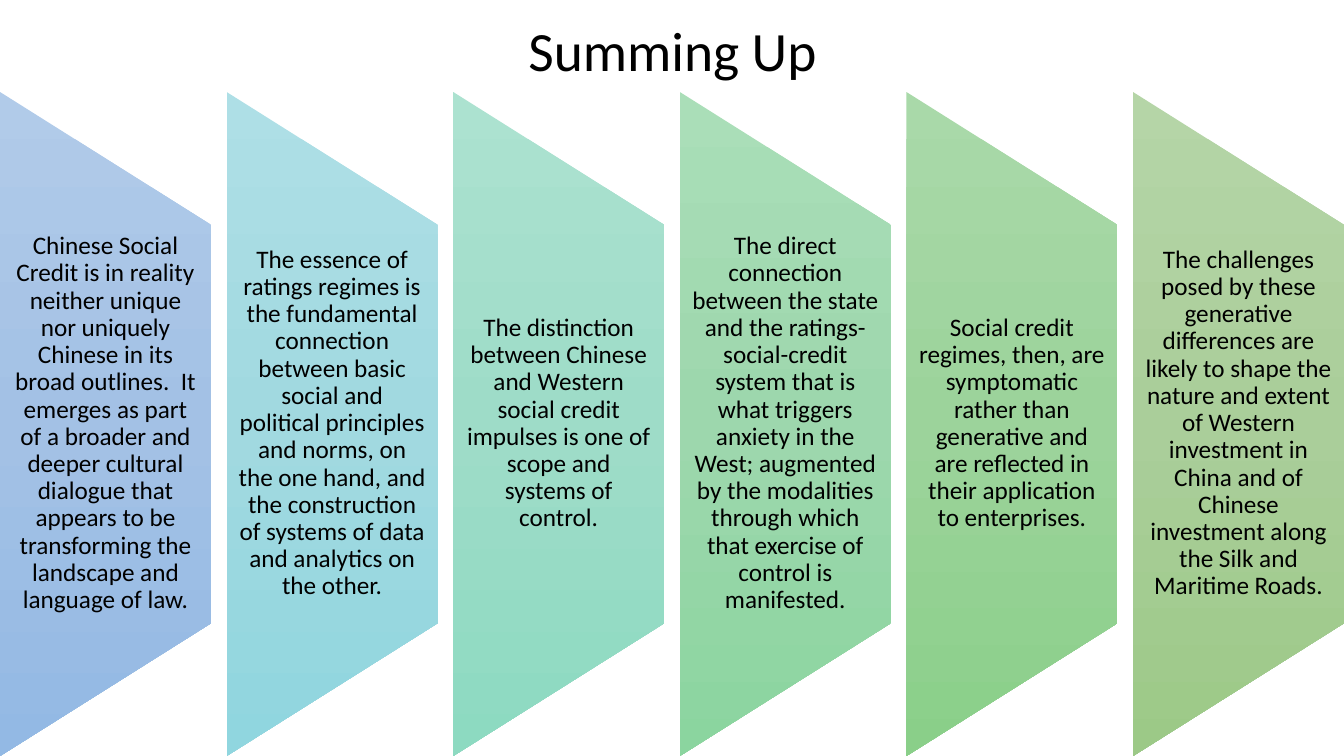
from pptx import Presentation
from pptx.dml.color import RGBColor
from pptx.enum.shapes import MSO_SHAPE
from pptx.enum.text import MSO_ANCHOR, MSO_AUTO_SIZE, PP_ALIGN
from pptx.oxml import parse_xml
from pptx.oxml.ns import nsdecls
from pptx.util import Emu, Pt

TRAPEZOID = MSO_SHAPE.FLOWCHART_MANUAL_OPERATION
MIDDLE, CENTER, NO_AUTOFIT = MSO_ANCHOR.MIDDLE, PP_ALIGN.CENTER, MSO_AUTO_SIZE.NONE
BLACK = RGBColor(0x00, 0x00, 0x00)

# Content: panel text with its top, middle and bottom gradient colours
TITLE = "Summing Up"
PANELS = [
    ("Chinese Social Credit is in reality neither unique nor uniquely Chinese in its "
     "broad outlines.  It emerges as part of a broader and deeper cultural dialogue that "
     "appears to be transforming the landscape and language of law.",
     (RGBColor(0xB1, 0xCB, 0xE9), RGBColor(0xA3, 0xC1, 0xE5), RGBColor(0x93, 0xB9, 0xE4))),
    ("The essence of ratings regimes is the fundamental connection between basic social "
     "and political principles and norms, on the one hand, and the construction of "
     "systems of data and analytics on the other.",
     (RGBColor(0xAE, 0xDF, 0xE6), RGBColor(0xA1, 0xD9, 0xE0), RGBColor(0x90, 0xD6, 0xDF))),
    ("The distinction between Chinese and Western social credit impulses is one of scope "
     "and systems of control.",
     (RGBColor(0xAC, 0xE2, 0xD0), RGBColor(0x9E, 0xDC, 0xC8), RGBColor(0x8D, 0xDA, 0xC1))),
    ("The direct connection between the state and the ratings-social-credit system that "
     "is what triggers anxiety in the West; augmented by the modalities through which "
     "that exercise of control is manifested.",
     (RGBColor(0xAA, 0xDE, 0xB8), RGBColor(0x9D, 0xD7, 0xAD), RGBColor(0x8B, 0xD5, 0x9F))),
    ("Social credit regimes, then, are symptomatic rather than generative and are "
     "reflected in their application to enterprises.",
     (RGBColor(0xA9, 0xD9, 0xA9), RGBColor(0x9C, 0xD3, 0x9B), RGBColor(0x8A, 0xCF, 0x89))),
    ("The challenges posed by these generative differences are likely to shape the nature "
     "and extent of Western investment in China and of Chinese investment along the Silk "
     "and Maritime Roads.",
     (RGBColor(0xB5, 0xD5, 0xA7), RGBColor(0xAA, 0xCE, 0x9A), RGBColor(0x9C, 0xC9, 0x87))),
]

# Layout in px
SLIDE_WIDTH, SLIDE_HEIGHT = 1344, 756
TITLE_BOX = (494, 16, 357, 75)
PANEL_TOP, PANEL_WIDTH, PANEL_HEIGHT = 92, 211, 664
TEXT_TOP, TEXT_HEIGHT, TEXT_INSET = 224, 399, 12
PANEL_PITCH = (SLIDE_WIDTH - PANEL_WIDTH) / (len(PANELS) - 1)

FRAME_FORMAT = {"word_wrap": True, "auto_size": NO_AUTOFIT, "vertical_anchor": MIDDLE}
PANEL_MARGINS = {"margin_left": TEXT_INSET, "margin_right": TEXT_INSET,
                 "margin_top": 0, "margin_bottom": 0}


def px(length):
    return Emu(round(length * 914400 / 100.8))


def set_attributes(target, values):
    for name, value in values.items():
        setattr(target, name, value)


def write_text(shape, text, size):
    frame = shape.text_frame
    frame.text = text
    set_attributes(frame, FRAME_FORMAT)
    paragraph = frame.paragraphs[0]
    set_attributes(paragraph, {"alignment": CENTER, "line_spacing": 0.9,
                               "space_before": Pt(0)})
    set_attributes(paragraph.font, {"name": "Calibri", "size": Pt(size)})
    paragraph.font.color.rgb = BLACK


def fill_downward(shape, colors):
    """Gradient that keeps running top to bottom when the shape is turned."""
    stops = "".join(
        f'<a:gs pos="{position}"><a:srgbClr val="{color}"/></a:gs>'
        for position, color in zip((0, 50000, 100000), colors))
    gradient = parse_xml(
        f'<a:gradFill {nsdecls("a")} rotWithShape="0"><a:gsLst>{stops}</a:gsLst>'
        '<a:lin ang="5400000" scaled="0"/></a:gradFill>')
    shape.fill.background()
    properties = shape._element.spPr
    properties.replace(properties.find("{*}noFill"), gradient)


def add_panel(slide, left, text, colors):
    # The trapezoid is drawn lying down and turned about its centre
    offset = (PANEL_HEIGHT - PANEL_WIDTH) / 2
    panel = slide.shapes.add_shape(TRAPEZOID, px(left - offset), px(PANEL_TOP + offset),
                                   px(PANEL_HEIGHT), px(PANEL_WIDTH))
    panel.rotation = 270
    panel.shadow.inherit = False
    fill_downward(panel, colors)
    panel.line.fill.background()

    # Upright text over the panel
    label = slide.shapes.add_textbox(px(left), px(TEXT_TOP), px(PANEL_WIDTH), px(TEXT_HEIGHT))
    set_attributes(label.text_frame,
                   {name: px(margin) for name, margin in PANEL_MARGINS.items()})
    write_text(label, text, 18)


def main():
    presentation = Presentation()
    presentation.slide_width, presentation.slide_height = px(SLIDE_WIDTH), px(SLIDE_HEIGHT)
    slide = presentation.slides.add_slide(presentation.slide_layouts.get_by_name("Title Only"))

    # Title
    title = slide.shapes.title
    set_attributes(title, dict(zip(("left", "top", "width", "height"), map(px, TITLE_BOX))))
    write_text(title, TITLE, 39.6)

    # Panels
    for index, (text, colors) in enumerate(PANELS):
        add_panel(slide, index * PANEL_PITCH, text, colors)

    presentation.save("out.pptx")


if __name__ == "__main__":
    main()
